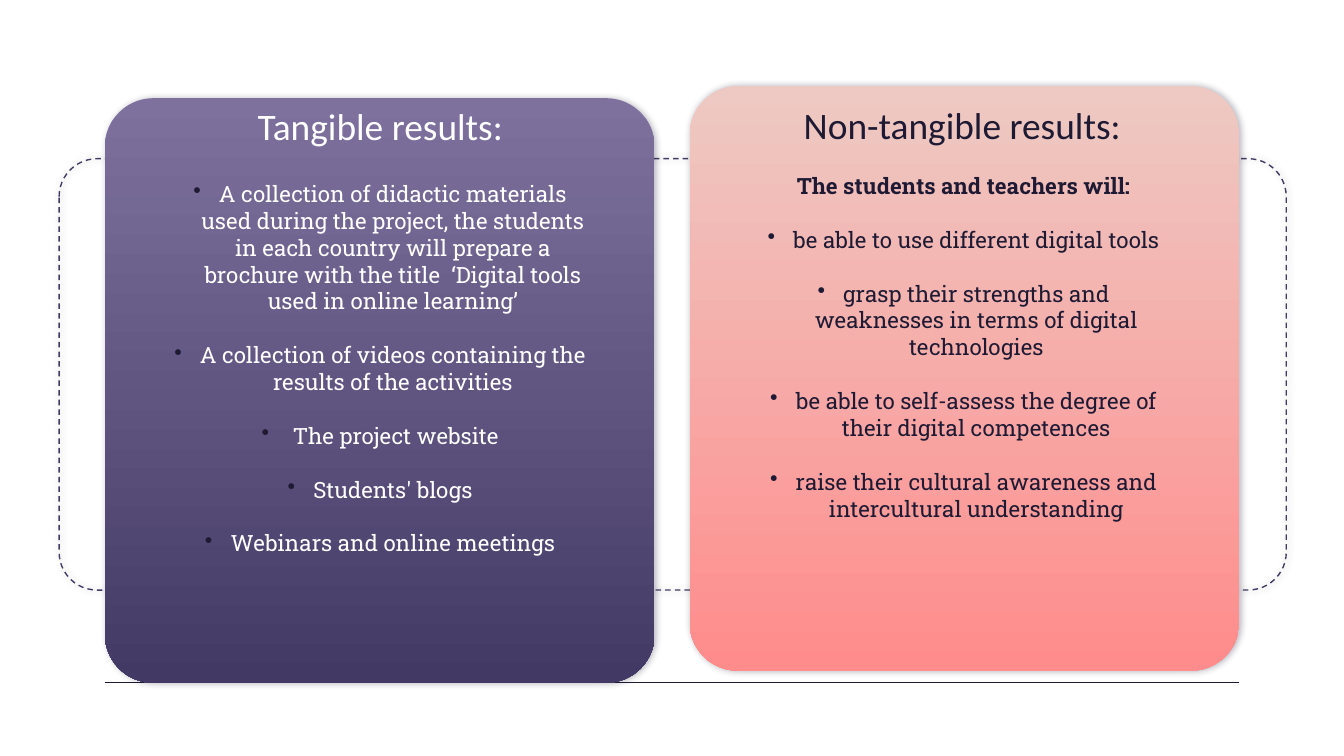
import dataclasses

import lxml.etree
import pptx
import pptx.dml.color
import pptx.enum.dml
import pptx.enum.shapes
import pptx.enum.text
import pptx.oxml.ns
import pptx.util

Pt = pptx.util.Pt
Align = pptx.enum.text.PP_ALIGN
Anchor = pptx.enum.text.MSO_ANCHOR
Kind = pptx.enum.shapes.MSO_SHAPE
qn = pptx.oxml.ns.qn


@dataclasses.dataclass(frozen=True)
class Theme:
    ink: str = "1F1A33"
    white: str = "FFFFFF"
    edge: str = "423A64"
    plum: tuple = ("7E719E", "423A64")
    rose: tuple = ("EEC9C3", "FF8C8C")
    head: str = "Calibri"
    body: str = "Roboto Slab"
    large: float = 20
    small: float = 12
    gap: float = 14.4
    inset: float = 7.2
    indent: float = 13.68
    thin: float = 0.75


def color(code):
    return pptx.dml.color.RGBColor.from_string(code)


def child(parent, tag, **values):
    return lxml.etree.SubElement(parent, qn(tag), **values)


class Deck:
    def __init__(self, theme):
        self.theme = theme
        self.file = pptx.Presentation()
        self.file.slide_width, self.file.slide_height = Pt(720), Pt(405)
        self.slide = self.file.slides.add_slide(self.file.slide_layouts[6])

    def rule(self, left, right, top):
        line = self.slide.shapes.add_connector(
            pptx.enum.shapes.MSO_CONNECTOR.STRAIGHT,
            Pt(left), Pt(top), Pt(right), Pt(top))
        line.line.color.rgb = color(self.theme.ink)
        line.line.width = Pt(self.theme.thin)
        child(line._element.spPr, "a:effectLst")

    def round(self, left, top, width, height):
        shape = self.slide.shapes.add_shape(
            Kind.ROUNDED_RECTANGLE, Pt(left), Pt(top), Pt(width), Pt(height))
        shape.adjustments[0] = 0.088
        shape.shadow.inherit = False
        return shape

    def shade(self, shape):
        effects = shape._element.spPr.find(qn("a:effectLst"))
        shadow = child(effects, "a:outerShdw", blurRad=str(Pt(3.4)),
                       dist=str(Pt(0.8)), dir="540000", rotWithShape="0")
        tint = child(shadow, "a:srgbClr", val=self.theme.ink)
        child(tint, "a:alpha", val="30000")

    def frame(self, *place):
        shape = self.round(*place)
        shape.fill.background()
        shape.line.color.rgb = color(self.theme.edge)
        shape.line.width = Pt(self.theme.thin)
        shape.line.dash_style = pptx.enum.dml.MSO_LINE.DASH
        self.shade(shape)

    def card(self, left, top, tones):
        shape = self.round(left, top, 294.5, 313.2)
        shape.fill.gradient()
        shape.fill.gradient_angle = 270
        for stop, tone in zip(shape.fill.gradient_stops, tones):
            stop.color.rgb = color(tone)
        shape.line.fill.background()
        self.shade(shape)

    def box(self, left, top, height):
        frame = self.slide.shapes.add_textbox(
            Pt(left), Pt(top), Pt(241.9), Pt(height)).text_frame
        frame.word_wrap = True
        frame.margin_left = frame.margin_right = Pt(self.theme.inset)
        frame.margin_top = frame.margin_bottom = Pt(self.theme.inset)
        return frame

    def label(self, para, text, face, size, tone, bold=False):
        para.text = text
        para.alignment = Align.CENTER
        para.font.name = face
        para.font.size = Pt(size)
        para.font.color.rgb = color(tone)
        para.font.bold = bold

    def title(self, left, top, text, tone):
        frame = self.box(left, top, 28.1)
        frame.vertical_anchor = Anchor.MIDDLE
        self.label(frame.paragraphs[0], text, self.theme.head,
                   self.theme.large, tone)

    def bullet(self, para):
        props = para._p.get_or_add_pPr()
        props.set("marL", str(Pt(self.theme.indent)))
        props.set("indent", str(-Pt(self.theme.indent)))
        child(child(props, "a:buClr"), "a:srgbClr", val=self.theme.ink)
        child(props, "a:buChar", char="•")

    def points(self, left, top, height, items, tone, lead=None):
        frame = self.box(left, top, height)
        lines = ([lead] if lead else []) + items
        for place, text in enumerate(lines):
            para = frame.add_paragraph() if place else frame.paragraphs[0]
            if text != lead:
                self.bullet(para)
            if place:
                para.space_before = Pt(self.theme.gap)
            self.label(para, text, self.theme.body, self.theme.small,
                       tone, text == lead)


def main():
    theme = Theme()
    deck = Deck(theme)
    deck.rule(56.2, 663.8, 365.8)
    deck.frame(31.7, 85, 657.4, 231.1)
    deck.card(369.4, 46.1, theme.rose)
    deck.card(56.2, 52.6, theme.plum)

    deck.title(82.8, 53.3, "Tangible results:", theme.white)
    deck.points(82.8, 89.3, 247.7, [
        "A collection of didactic materials used during the project, "
        "the students in each country will prepare a brochure with "
        "the title  ‘Digital tools used in online learning’",
        "A collection of videos containing the results of the activities",
        " The project website",
        "Students' blogs",
        "Webinars and online meetings",
    ], theme.white)

    deck.title(394.6, 52.6, "Non-tangible results:", theme.ink)
    deck.points(395.3, 85, 274.3, [
        "be able to use different digital tools",
        "grasp their strengths and weaknesses in terms of digital technologies",
        "be able to self-assess the degree of their digital competences",
        "raise their cultural awareness and intercultural understanding",
    ], theme.ink, "The students and teachers will:")

    deck.file.save("out.pptx")


if __name__ == "__main__":
    main()
